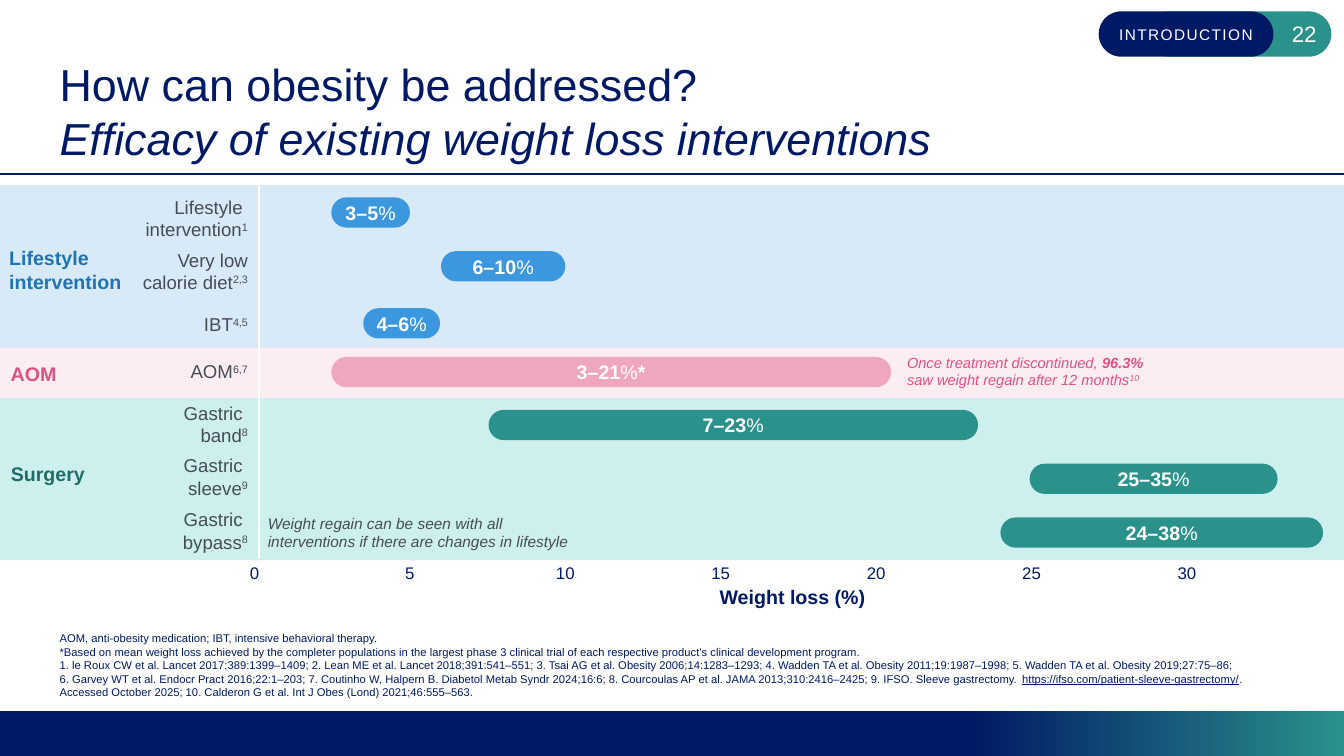
from lxml import etree
from pptx import Presentation
from pptx import util as u
from pptx.dml.color import RGBColor
from pptx.enum import shapes, text
from pptx.oxml import ns

# The slide is a grid of 160 columns by 90 rows
COLS, ROWS = 160, 90
WIDTH, HEIGHT = u.Inches(13.33), u.Inches(7.5)

NAVY, TEAL, GREY, WHITE = "001965", "2A918B", "464C57", "FFFFFF"
BLUE, PINK, ROSE = "3B97DE", "EEA7BF", "DE5281"
LEFT, CENTER, RIGHT = text.PP_ALIGN.LEFT, text.PP_ALIGN.CENTER, text.PP_ALIGN.RIGHT
TOP, MIDDLE, BOTTOM = (text.MSO_ANCHOR.TOP, text.MSO_ANCHOR.MIDDLE,
                       text.MSO_ANCHOR.BOTTOM)

# Weight loss axis: column of 0 % and columns per 1 %
AXIS_ZERO, AXIS_UNIT = 30.3, 3.7
BAR_HEIGHT = 3.6
LABEL_RIGHT, LABEL_WIDTH = 30.7, 17.9

# Colour, top row, height
BANDS = [("CDF0EE", 47.2, 19.5), ("FCEDF2", 41.3, 6.1), ("D8EAF8", 22, 19.4)]

# Label, reference, label middle, bar middle, bar start and end in %, range, colour
INTERVENTIONS = [
    ("Lifestyle \nintervention", "1", 26, 25.3, 2.47, 5, "3–5", BLUE),
    ("Very low calorie diet", "2,3", 32.3, 31.7, 6, 10, "6–10", BLUE),
    ("IBT", "4,5", 38.7, 38.5, 3.5, 5.97, "4–6", BLUE),
    ("AOM", "6,7", 44.3, 44.3, 2.47, 20.48, "3–21", PINK),
    ("Gastric \nband", "8", 50.5, 50.6, 7.53, 23.28, "7–23", TEAL),
    ("Gastric \nsleeve", "9", 56.8, 57, 24.94, 32.92, "25–35", TEAL),
    ("Gastric \nbypass", "8", 63.2, 63.4, 24, 34.38, "24–38", TEAL),
]

# Group name, column, row, width, height, colour
GROUPS = [
    ("Lifestyle intervention", -0.1, 28.7, 18.2, 6.8, "1E73B4"),
    ("AOM", 0.1, 42.5, 9.8, 4.1, ROSE),
    ("Surgery", 0.1, 54.4, 31.4, 4.1, "206D68"),
]

FOOTNOTE = (
    "AOM, anti-obesity medication; IBT, intensive behavioral therapy.\n"
    "*Based on mean weight loss achieved by the completer populations in the largest "
    "phase 3 clinical trial of each respective product’s clinical development program.\n"
    "1. le Roux CW et al. Lancet 2017;389:1399–1409; "
    "2. Lean ME et al. Lancet 2018;391:541–551; "
    "3. Tsai AG et al. Obesity 2006;14:1283–1293; "
    "4. Wadden TA et al. Obesity 2011;19:1987–1998; "
    "5. Wadden TA et al. Obesity 2019;27:75–86; \n"
    "6. Garvey WT et al. Endocr Pract 2016;22:1–203; "
    "7. Coutinho W, Halpern B. Diabetol Metab Syndr 2024;16:6; "
    "8. Courcoulas AP et al. JAMA 2013;310:2416–2425; 9. IFSO. Sleeve gastrectomy. "
)


def color(hex_string):
    return RGBColor.from_string(hex_string)


def x(col):
    return round(WIDTH * col / COLS)


def y(row):
    return round(HEIGHT * row / ROWS)


def place(col, row, width, height):
    return x(col), y(row), x(width), y(height)


def write(frame, parts, size, ink, align=LEFT, anchor=TOP, insets=(0.1, 0.05),
          spacing=0):
    """Fill one paragraph with (words, style) parts; style letters: b, i, u, ^."""
    frame.word_wrap = True
    frame.vertical_anchor = anchor
    frame.margin_left = frame.margin_right = u.Inches(insets[0])
    frame.margin_top = frame.margin_bottom = u.Inches(insets[1])
    paragraph = frame.paragraphs[0]
    paragraph.alignment = align
    for words, style in parts:
        for number, line in enumerate(words.split("\n")):
            if number:
                paragraph.add_line_break()
            if not line:
                continue
            run = paragraph.add_run()
            run.text = line
            run.font.name, run.font.size = "Arial", u.Pt(size)
            run.font.color.rgb = color(ink)
            run.font.bold, run.font.italic = "b" in style, "i" in style
            run.font.underline = "u" in style
            properties = run._r.get_or_add_rPr()
            if "^" in style:
                properties.set("baseline", "30000")
            if spacing:
                properties.set("spc", str(spacing * 100))


def add_text(slide, box, parts, size, ink, **layout):
    write(slide.shapes.add_textbox(*place(*box)).text_frame, parts, size, ink, **layout)


def add_block(slide, box, fill, rounded=False):
    kind = shapes.MSO_SHAPE.ROUNDED_RECTANGLE if rounded else shapes.MSO_SHAPE.RECTANGLE
    block = slide.shapes.add_shape(kind, *place(*box))
    block.shadow.inherit = False
    block.line.fill.background()
    block.fill.solid()
    block.fill.fore_color.rgb = color(fill)
    if rounded:
        block.adjustments[0] = 0.5
    return block


def add_rule(slide, start, end, ink):
    rule = slide.shapes.add_connector(shapes.MSO_CONNECTOR.STRAIGHT, x(start[0]),
                                      y(start[1]), x(end[0]), y(end[1]))
    rule.line.color.rgb = color(ink)
    rule.line.width = u.Pt(1.5)
    etree.SubElement(rule._element.spPr, ns.qn("a:effectLst"))


def add_frame(slide):
    add_rule(slide, (0, 20.7), (COLS, 20.7), NAVY)
    badge = {"anchor": MIDDLE, "insets": (0.08, 0.04)}
    page = add_block(slide, (136.6, 1.35, 21.9, 5.4), TEAL, rounded=True)
    write(page.text_frame, [("22", "")], 16, WHITE, align=RIGHT, **badge)
    section = add_block(slide, (130.8, 1.35, 20.8, 5.4), NAVY, rounded=True)
    write(section.text_frame, [("INTRODUCTION", "")], 11, WHITE, align=CENTER,
          spacing=1, **badge)

    footer = add_block(slide, (0, 84.6, COLS, 5.4), NAVY)
    footer.fill.gradient()
    footer.fill.gradient_angle = 0
    for stop, (position, ink) in zip(footer.fill.gradient_stops,
                                     [(0.72, NAVY), (1, TEAL)]):
        stop.position, stop.color.rgb = position, color(ink)


def add_intervention(slide, label, reference, label_row, bar_row, start, end, span, fill):
    height = 6.6 if "\n" in label or len(label) > 15 else 4
    add_text(slide, (LABEL_RIGHT - LABEL_WIDTH, label_row - height / 2,
                     LABEL_WIDTH, height),
             [(label, ""), (reference, "^")], 13.3, GREY, align=RIGHT)
    bar = add_block(slide, (AXIS_ZERO + start * AXIS_UNIT, bar_row - BAR_HEIGHT / 2,
                            (end - start) * AXIS_UNIT, BAR_HEIGHT), fill, rounded=True)
    parts = [(span, "b"), ("%", "")] + ([("*", "b")] if label == "AOM" else [])
    write(bar.text_frame, parts, 14, WHITE, align=CENTER, anchor=MIDDLE, insets=(0, 0))


def add_axis(slide):
    add_rule(slide, (30.85, 22), (30.85, 66.6), WHITE)
    for percent in range(0, 31, 5):
        add_text(slide, (AXIS_ZERO + percent * AXIS_UNIT - 4, 66.4, 8, 3.6),
                 [(str(percent), "")], 12, NAVY, align=CENTER)
    add_text(slide, (30.2, 69.1, 128.3, 4.1), [("Weight loss (%)", "b")], 14, NAVY,
             align=CENTER)


def main():
    deck = Presentation()
    deck.slide_width, deck.slide_height = WIDTH, HEIGHT
    slide = deck.slides.add_slide(deck.slide_layouts[6])

    # Frame, title and footnote
    add_frame(slide)
    edge = {"anchor": BOTTOM, "insets": (0, 0)}
    add_text(slide, (7.1, 5.4, 143, 14.2),
             [("How can obesity be addressed?\n", ""),
              ("Efficacy of existing weight loss interventions", "i")], 32, NAVY, **edge)
    add_text(slide, (7.1, 74.8, 143, 8.4),
             [(FOOTNOTE, ""), ("https://ifso.com/patient-sleeve-gastrectomy/", "u"),
              (". Accessed October 2025; 10. Calderon G et al. "
               "Int J Obes (Lond) 2021;46:555–563.", "")], 8, NAVY, **edge)

    # Range chart
    for fill, top, height in BANDS:
        add_block(slide, (0, top, COLS, height), fill)
    add_axis(slide)
    for intervention in INTERVENTIONS:
        add_intervention(slide, *intervention)
    for name, *box, ink in GROUPS:
        add_text(slide, box, [(name, "b")], 14, ink)

    # Remarks on weight regain
    add_text(slide, (106.8, 41.5, 31.4, 5.4),
             [("Once treatment discontinued, ", "i"), ("96.3% ", "bi"),
              ("saw weight regain after 12 months", "i"), ("10", "i^")], 10.5, ROSE)
    add_text(slide, (30.7, 60.6, 39.1, 5.6),
             [("Weight regain can be seen with all interventions "
               "if there are changes in lifestyle", "i")], 11, GREY)

    deck.save("out.pptx")


if __name__ == "__main__":
    main()
